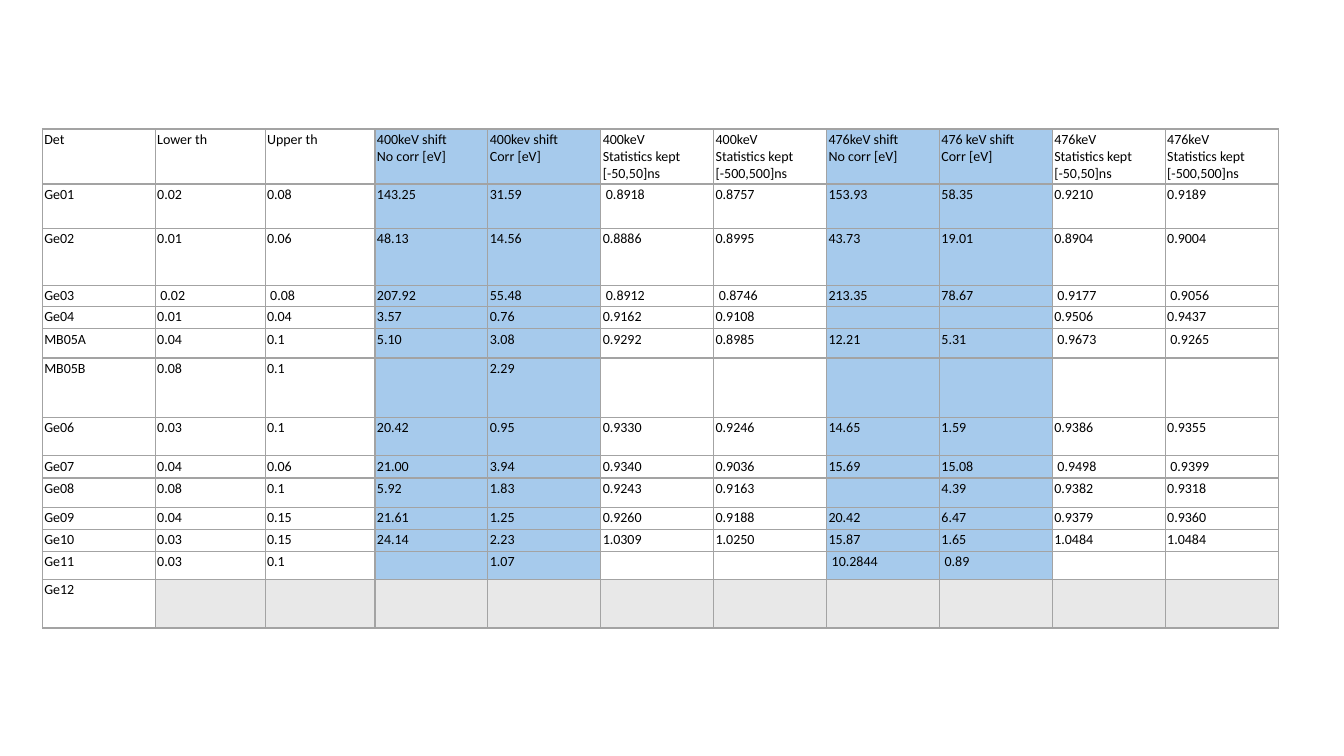
"""Build a slide with a table of detector thresholds, shifts and kept statistics."""
from lxml import etree
from pptx import Presentation
from pptx.dml.color import RGBColor
from pptx.oxml import ns
from pptx.util import Inches, Pt

COLORS = {"text": "000000", "border": "A3A3A3", "shift": "A6CAEC", "missing": "E8E8E8"}
SHIFT_COLUMNS = {3, 4, 7, 8}
COLUMN_WIDTHS = [1.12, 1.09, 1.09] + [1.12] * 8
ROW_HEIGHTS = [0.54, 0.44, 0.57, 0.2, 0.22, 0.29, 0.59, 0.38, 0.22, 0.29, 0.22, 0.22, 0.28, 0.48]

STATISTICS = ["Statistics kept \v[-50,50]ns", "Statistics kept \v[-500,500]ns"]
HEADER = [
    "Det", "Lower th", "Upper th",
    "400keV shift\nNo corr [eV]", "400kev shift\nCorr [eV]",
    *[f"400keV\n{kept}" for kept in STATISTICS],
    "476keV shift\nNo corr [eV]", "476 keV shift\nCorr [eV]",
    *[f"476keV\n{kept}" for kept in STATISTICS],
]
DETECTORS = [
    "Ge01|0.02|0.08|143.25|31.59| 0.8918|0.8757|153.93|58.35|0.9210|0.9189",
    "Ge02|0.01|0.06|48.13|14.56|0.8886|0.8995|43.73|19.01|0.8904|0.9004",
    "Ge03| 0.02| 0.08|207.92|55.48| 0.8912| 0.8746|213.35|78.67| 0.9177| 0.9056",
    "Ge04|0.01|0.04|3.57|0.76|0.9162|0.9108|||0.9506|0.9437",
    "MB05A|0.04|0.1|5.10|3.08|0.9292|0.8985|12.21|5.31| 0.9673| 0.9265",
    "MB05B|0.08|0.1||2.29||||||",
    "Ge06|0.03|0.1|20.42|0.95|0.9330|0.9246|14.65|1.59|0.9386|0.9355",
    "Ge07|0.04|0.06|21.00|3.94|0.9340|0.9036|15.69|15.08| 0.9498| 0.9399",
    "Ge08|0.08|0.1|5.92|1.83|0.9243|0.9163||4.39|0.9382|0.9318",
    "Ge09|0.04|0.15|21.61|1.25|0.9260|0.9188|20.42|6.47|0.9379|0.9360",
    "Ge10|0.03|0.15|24.14|2.23|1.0309|1.0250|15.87|1.65|1.0484|1.0484",
    "Ge11|0.03|0.1||1.07||| 10.2844| 0.89||",
    "Ge12||||||||||",
]


def add_run(p, content):
    r = p.add_run()
    r.text = content
    r.font.name = "Calibri"
    r.font.size = Pt(10)
    r.font.color.rgb = RGBColor.from_string(COLORS["text"])


def write_text(cell, content):
    cell.margin_left = cell.margin_right = Inches(0.02)
    cell.margin_top = cell.margin_bottom = Inches(0.02)
    tf = cell.text_frame
    for i, paragraph in enumerate(content.split("\n")):
        p = tf.add_paragraph() if i else tf.paragraphs[0]
        for j, line in enumerate(paragraph.split("\v")):
            if j:
                p.add_line_break()
            if line:
                add_run(p, line)
        p._p.get_or_add_endParaRPr().set("sz", "1000")


def set_borders(cell):
    tcPr = cell._tc.get_or_add_tcPr()
    for side in ("lnL", "lnR", "lnT", "lnB"):
        ln = etree.SubElement(tcPr, ns.qn(f"a:{side}"), w=str(Pt(1)))
        fill = etree.SubElement(ln, ns.qn("a:solidFill"))
        etree.SubElement(fill, ns.qn("a:srgbClr"), val=COLORS["border"])


def set_fill(cell, color):
    if color is None:
        cell.fill.background()
    else:
        cell.fill.solid()
        cell.fill.fore_color.rgb = RGBColor.from_string(COLORS[color])


def fill_color(values, column):
    if column and not any(values[1:]):
        return "missing"
    return "shift" if column in SHIFT_COLUMNS else None


def add_detector_table(s, rows):
    frame = s.shapes.add_table(
        len(rows), len(HEADER), Inches(0.42), Inches(1.28),
        Inches(sum(COLUMN_WIDTHS)), Inches(sum(ROW_HEIGHTS)))
    table = frame.table
    table.first_row = table.horz_banding = False
    for column, width in zip(table.columns, COLUMN_WIDTHS):
        column.width = Inches(width)
    for row, height, values in zip(table.rows, ROW_HEIGHTS, rows):
        row.height = Inches(height)
        for i, (cell, value) in enumerate(zip(row.cells, values)):
            write_text(cell, value)
            set_borders(cell)
            set_fill(cell, fill_color(values, i))


def main():
    prs = Presentation()
    prs.slide_width, prs.slide_height = Inches(13.33), Inches(7.5)
    s = prs.slides.add_slide(prs.slide_layouts[6])
    add_detector_table(s, [HEADER] + [line.split("|") for line in DETECTORS])
    prs.save("out.pptx")


if __name__ == "__main__":
    main()
